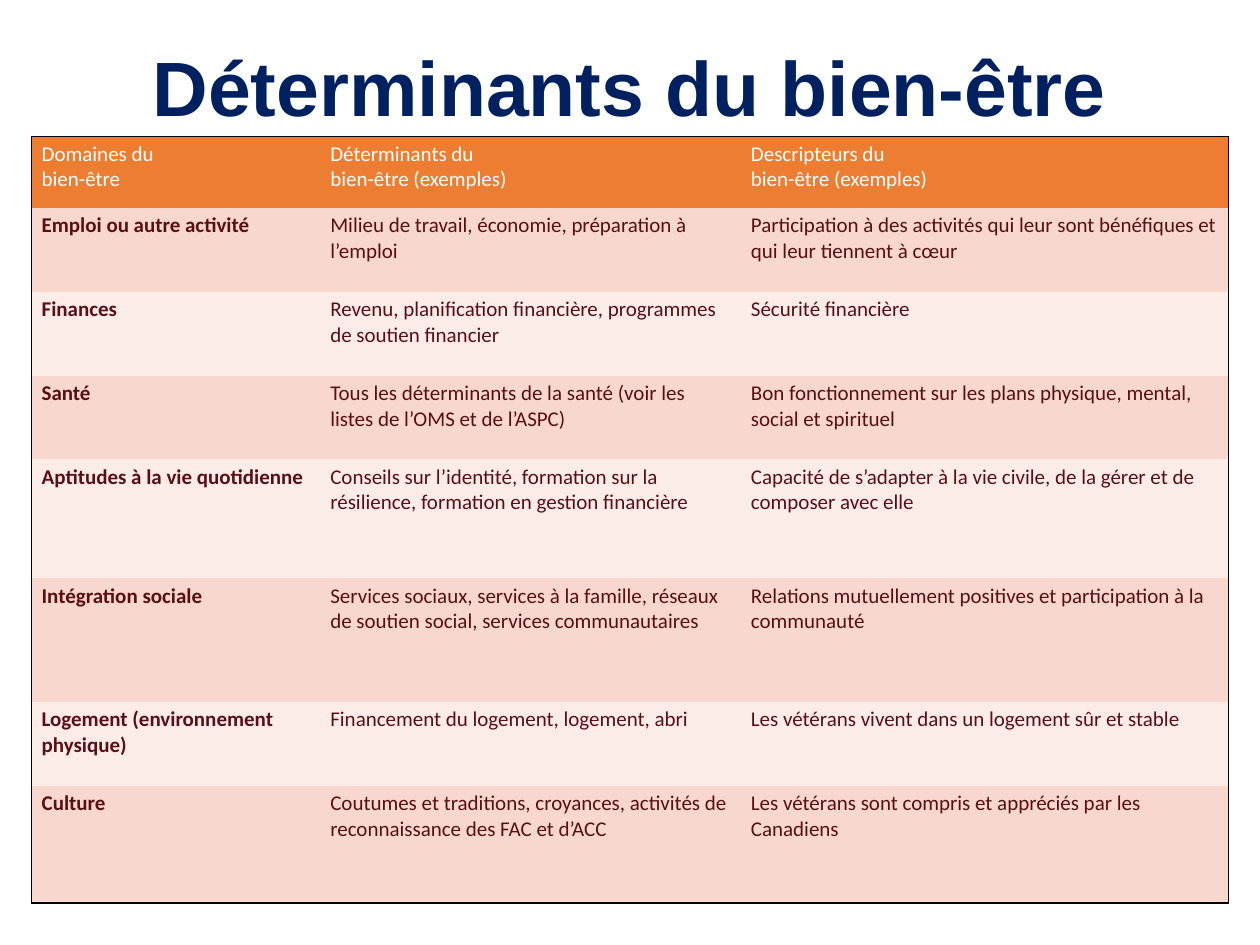
import pptx
import pptx.dml.color
import pptx.enum.text
import pptx.oxml
import pptx.oxml.ns
import pptx.util
from dataclasses import dataclass

Cm = pptx.util.Cm
Pt = pptx.util.Pt


@dataclass(frozen=True)
class Theme:
    title_font: str = "Arial"
    table_font: str = "Calibri"
    title_size: int = 44
    table_size: int = 12
    title_ink: str = "002060"
    header_ink: str = "FFFFFF"
    body_ink: str = "590F16"
    header_fill: str = "ED7D31"
    band_fills: tuple = ("F8D7CE", "FCECE8")
    border: str = "000000"


THEME = Theme()
COLUMN_WIDTHS = (5.82, 8.48, 9.83)
ROW_HEIGHTS = (1.44, 1.69, 1.69, 1.69, 2.4, 2.49, 1.69, 2.36)
DETERMINANTS = (
    ("Domaines du\nbien-être", "Déterminants du\nbien-être (exemples)",
     "Descripteurs du\nbien-être (exemples)"),
    ("Emploi ou autre activité",
     "Milieu de travail, économie, préparation à l’emploi",
     "Participation à des activités qui leur sont bénéfiques et qui leur tiennent à cœur"),
    ("Finances",
     "Revenu, planification financière, programmes de soutien financier",
     "Sécurité financière"),
    ("Santé",
     "Tous les déterminants de la santé (voir les listes de l’OMS et de l’ASPC)",
     "Bon fonctionnement sur les plans physique, mental, social et spirituel"),
    ("Aptitudes à la vie quotidienne",
     "Conseils sur l’identité, formation sur la résilience, formation en gestion financière",
     "Capacité de s’adapter à la vie civile, de la gérer et de composer avec elle"),
    ("Intégration sociale",
     "Services sociaux, services à la famille, réseaux de soutien social, services communautaires",
     "Relations mutuellement positives et participation à la communauté"),
    ("Logement (environnement physique)",
     "Financement du logement, logement, abri",
     "Les vétérans vivent dans un logement sûr et stable"),
    ("Culture",
     "Coutumes et traditions, croyances, activités de reconnaissance des FAC et d’ACC",
     "Les vétérans sont compris et appréciés par les Canadiens"),
)


def rgb(value):
    return pptx.dml.color.RGBColor.from_string(value)


def apply_format(target, values):
    for attribute, value in values.items():
        setattr(target, attribute, value)


def style_text(frame, ink, **font_values):
    for paragraph in frame.paragraphs:
        for run in paragraph.runs:
            apply_format(run.font, font_values)
            run.font.color.rgb = rgb(ink)


def set_borders(cell, drawn_sides):
    properties = cell._tc.get_or_add_tcPr()
    for position, side in enumerate("LRTB"):
        paint = "<a:noFill/>"
        if side in drawn_sides:
            paint = f'<a:solidFill><a:srgbClr val="{THEME.border}"/></a:solidFill>'
        properties.insert(position, pptx.oxml.parse_xml(
            f'<a:ln{side} {pptx.oxml.ns.nsdecls("a")} w="{Pt(1)}">{paint}</a:ln{side}>'))


def add_title(slide, left, top, width, height):
    heading = slide.shapes.add_textbox(left, top, width, height).text_frame
    apply_format(heading, {
        "word_wrap": True,
        "vertical_anchor": pptx.enum.text.MSO_ANCHOR.MIDDLE,
        "text": "Déterminants du bien-être",
    })
    apply_format(heading.paragraphs[0], {
        "alignment": pptx.enum.text.PP_ALIGN.CENTER,
        "line_spacing": 0.9,
    })
    style_text(heading, THEME.title_ink, name=THEME.title_font,
               size=Pt(THEME.title_size), bold=True)


def fill_cell(cell, wording, row, column):
    is_header = row == 0
    apply_format(cell, {
        "text": wording,
        "margin_left": Cm(0.2), "margin_right": Cm(0.2),
        "margin_top": Cm(0.1), "margin_bottom": Cm(0.1),
    })
    style_text(cell.text_frame,
               THEME.header_ink if is_header else THEME.body_ink,
               name=THEME.table_font, size=Pt(THEME.table_size),
               bold=column == 0 and not is_header)
    cell.fill.solid()
    cell.fill.fore_color.rgb = rgb(
        THEME.header_fill if is_header else THEME.band_fills[(row - 1) % 2])
    outer_sides = {
        "L": column == 0, "R": column == len(COLUMN_WIDTHS) - 1,
        "T": is_header, "B": row == len(ROW_HEIGHTS) - 1,
    }
    set_borders(cell, [side for side, outer in outer_sides.items() if outer])


def add_determinants(slide, left, top, width, height):
    determinants = slide.shapes.add_table(
        len(ROW_HEIGHTS), len(COLUMN_WIDTHS), left, top, width, height).table
    for column, share in zip(determinants.columns, COLUMN_WIDTHS):
        column.width = int(width * share / sum(COLUMN_WIDTHS))
    for row, share in zip(determinants.rows, ROW_HEIGHTS):
        row.height = int(height * share / sum(ROW_HEIGHTS))
    for row, wordings in enumerate(DETERMINANTS):
        for column, wording in enumerate(wordings):
            fill_cell(determinants.cell(row, column), wording, row, column)


def main():
    presentation = pptx.Presentation()
    apply_format(presentation, {"slide_width": Cm(25.4), "slide_height": Cm(19.05)})
    slide = presentation.slides.add_slide(presentation.slide_layouts[6])
    add_title(slide, Cm(0), Cm(0), presentation.slide_width, Cm(3.68))
    add_determinants(slide, Cm(0.64), Cm(2.75), Cm(24.13), Cm(15.45))
    presentation.save("out.pptx")


if __name__ == "__main__":
    main()
